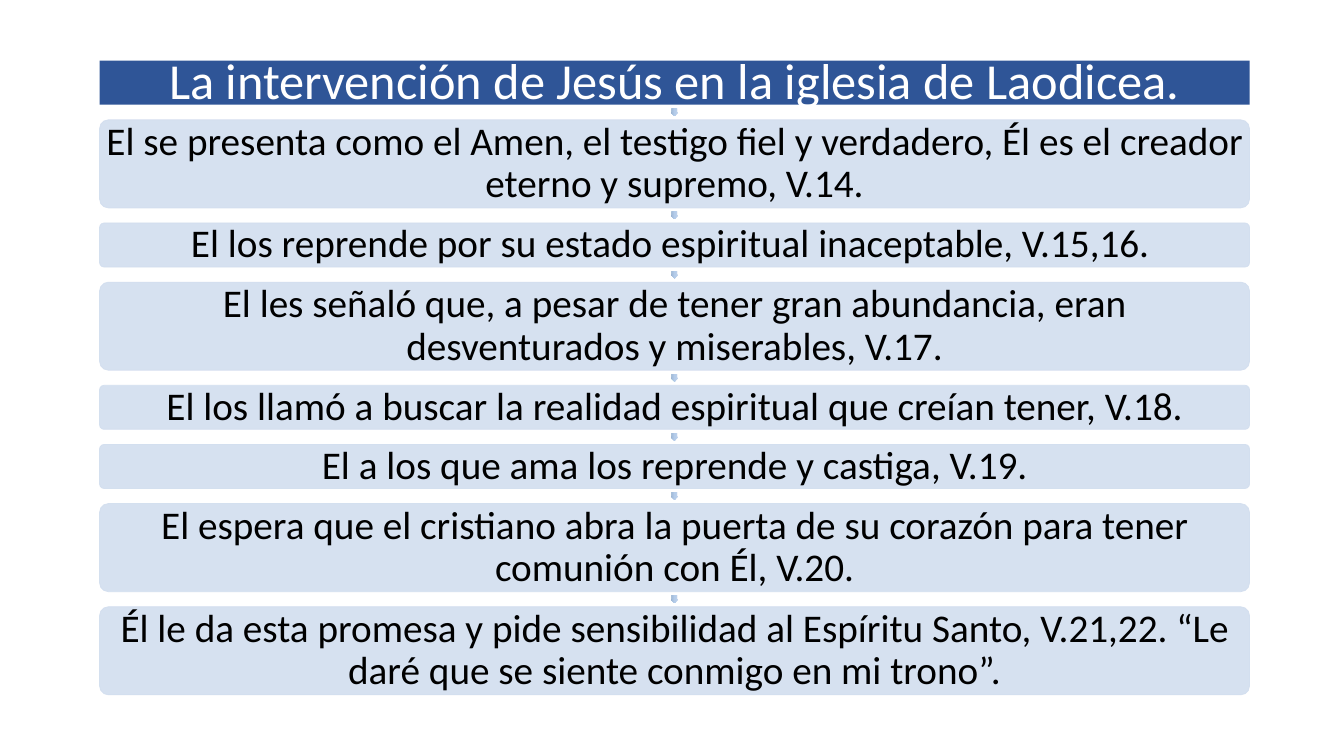
import pptx
import pptx.dml.color
import pptx.enum.shapes
import pptx.enum.text
import pptx.oxml
import pptx.oxml.ns
from lxml import etree
from pptx.util import Cm

SHAPE = pptx.enum.shapes.MSO_SHAPE
LEFT, TOP, WIDTH = 2.51, 1.53, 28.98
LINE_HEIGHT, GAP, ARROW = 1.11, 0.38, 0.2

TITLE = "La intervención de Jesús en la iglesia de Laodicea."
# Text and number of lines of each step
STEPS = [
    ("El se presenta como el Amen, el testigo fiel y verdadero, Él es el creador eterno y supremo, V.14.", 2),
    ("El los reprende por su estado espiritual inaceptable, V.15,16. ", 1),
    ("El les señaló que, a pesar de tener gran abundancia, eran desventurados y miserables, V.17.", 2),
    ("El los llamó a buscar la realidad espiritual que creían tener, V.18.", 1),
    ("El a los que ama los reprende y castiga, V.19.", 1),
    ("El espera que el cristiano abra la puerta de su corazón para tener comunión con Él, V.20.", 2),
    ("Él le da esta promesa y pide sensibilidad al Espíritu Santo, V.21,22. “Le daré que se siente conmigo en mi trono”.", 2),
]


def rgb(value):
    return pptx.dml.color.RGBColor.from_string(value)


def set_attributes(target, values):
    for name, value in values.items():
        setattr(target, name, value)


def set_fill(fill, color, alpha=None):
    fill.solid()
    fill.fore_color.rgb = rgb(color)
    if alpha:
        clr = fill._xPr.find(".//" + pptx.oxml.ns.qn("a:srgbClr"))
        etree.SubElement(clr, pptx.oxml.ns.qn("a:alpha"), val=str(alpha * 1000))


def write_text(s, text, size, color, inset):
    tf = s.text_frame
    set_attributes(tf, {
        "word_wrap": True,
        "auto_size": pptx.enum.text.MSO_AUTO_SIZE.NONE,
        "vertical_anchor": pptx.enum.text.MSO_ANCHOR.MIDDLE,
        "margin_left": Cm(inset), "margin_right": Cm(inset),
        "margin_top": Cm(inset), "margin_bottom": Cm(inset),
    })
    p = tf.paragraphs[0]
    set_attributes(p, {"alignment": pptx.enum.text.PP_ALIGN.CENTER, "line_spacing": 0.9})
    r = p.add_run()
    r.text = text
    set_attributes(r.font, {"size": pptx.util.Pt(size), "name": "Calibri"})
    r.font.color.rgb = rgb(color)


def add_title(slide, text):
    s = slide.shapes.title
    set_attributes(s, {"left": Cm(LEFT), "top": Cm(TOP),
                       "width": Cm(WIDTH), "height": Cm(LINE_HEIGHT)})
    # Rounded outline for the title placeholder
    s.element.spPr.append(pptx.oxml.parse_xml(
        f'<a:prstGeom {pptx.oxml.ns.nsdecls("a")} prst="roundRect">'
        '<a:avLst><a:gd name="adj" fmla="val 10000"/></a:avLst></a:prstGeom>'))
    set_fill(s.fill, "2F5597")
    write_text(s, text, 36, "FFFFFF", 0.12)


def add_step(slide, text, top, height):
    s = slide.shapes.add_shape(SHAPE.ROUNDED_RECTANGLE, Cm(LEFT), Cm(top), Cm(WIDTH), Cm(height))
    s.shadow.inherit = False
    s.adjustments[0] = 0.1
    set_fill(s.fill, "D2DEEF", 90)
    set_fill(s.line.fill, "D2DEEF", 90)
    s.line.width = pptx.util.Pt(0.5)
    write_text(s, text, 28, "000000", 0.08)


def add_arrow(slide, gap_top):
    s = slide.shapes.add_shape(
        SHAPE.RIGHT_ARROW, Cm(LEFT + (WIDTH - ARROW) / 2),
        Cm(gap_top + (GAP - ARROW) / 2), Cm(ARROW), Cm(ARROW))
    s.shadow.inherit = False
    s.rotation = 90
    s.adjustments[0] = 0.667
    s.line.fill.background()
    # Three-stop gradient
    stops = "".join(
        f'<a:gs pos="{pos * 1000}"><a:srgbClr val="{color}"/></a:gs>'
        for pos, color in ((0, "C0D2EB"), (50, "B3CBE9"), (100, "9BB4D3")))
    s.element.spPr.find(pptx.oxml.ns.qn("a:prstGeom")).addnext(pptx.oxml.parse_xml(
        f'<a:gradFill {pptx.oxml.ns.nsdecls("a")} rotWithShape="1">'
        f'<a:gsLst>{stops}</a:gsLst><a:lin ang="5400000" scaled="0"/></a:gradFill>'))


def main():
    prs = pptx.Presentation()
    set_attributes(prs, {"slide_width": Cm(33.87), "slide_height": Cm(19.05)})
    slide = prs.slides.add_slide(prs.slide_layouts[5])
    add_title(slide, TITLE)

    # Each step follows the box above, with an arrow in the gap
    bottom = TOP + LINE_HEIGHT
    for text, lines in STEPS:
        add_arrow(slide, bottom)
        height = lines * LINE_HEIGHT
        add_step(slide, text, bottom + GAP, height)
        bottom += GAP + height

    prs.save("out.pptx")


if __name__ == "__main__":
    main()
